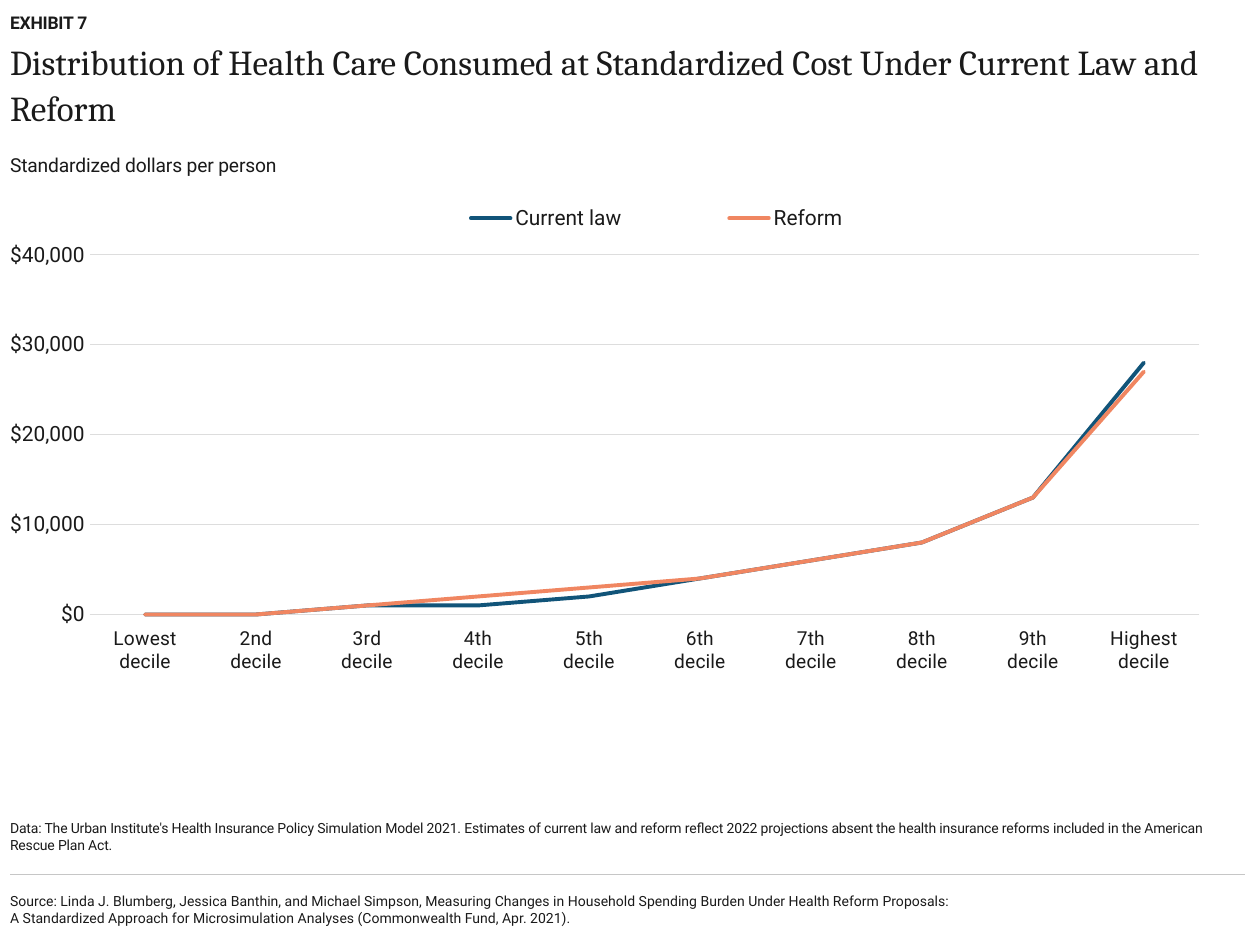
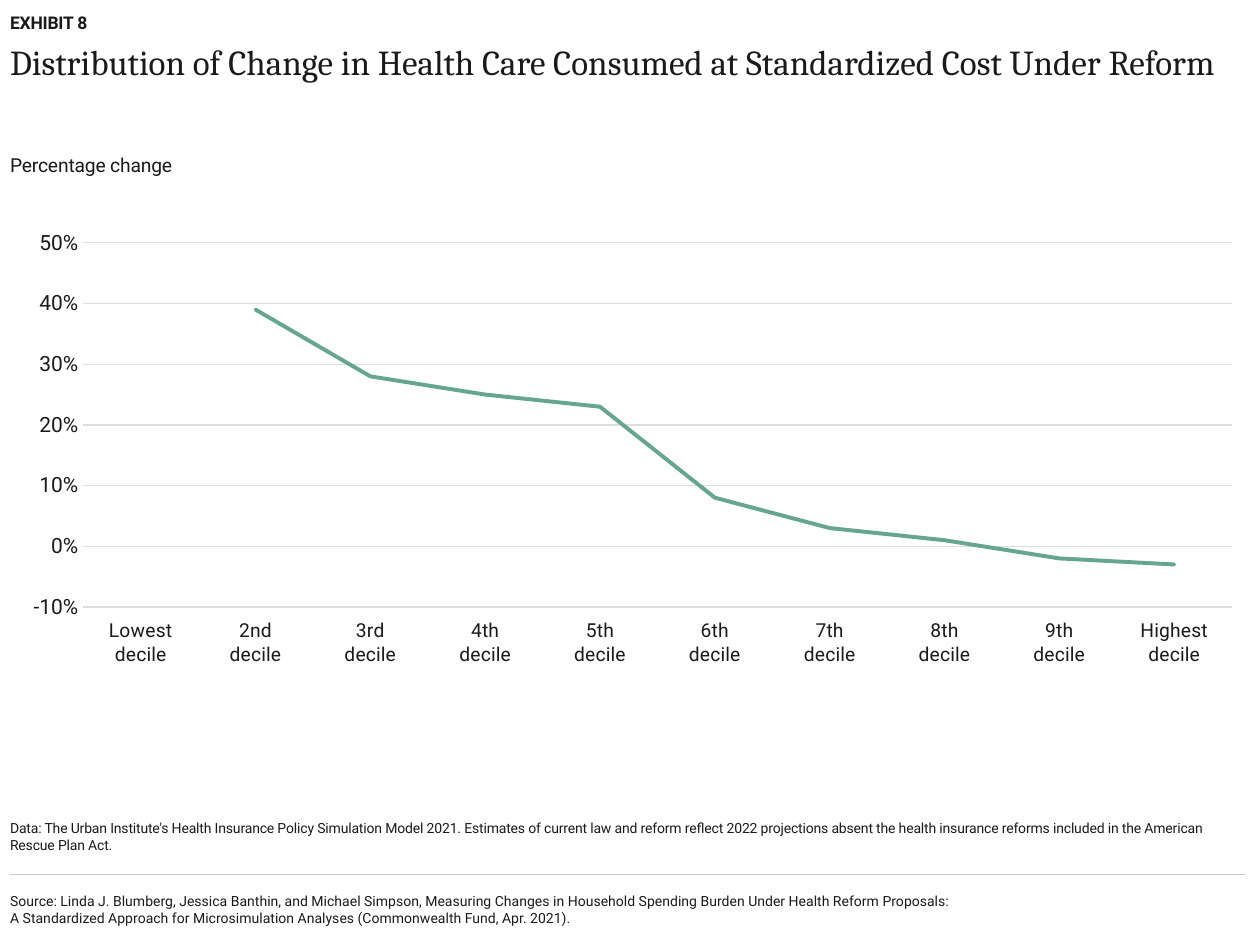
from lxml import etree
from pptx import Presentation
from pptx.chart.data import CategoryChartData
from pptx.dml.color import RGBColor
from pptx.enum.chart import XL_CHART_TYPE as Kind
from pptx.enum.chart import XL_LEGEND_POSITION as LegendPos
from pptx.enum.chart import XL_TICK_LABEL_POSITION as LabelPos
from pptx.enum.chart import XL_TICK_MARK as Tick
from pptx.enum.shapes import MSO_CONNECTOR as Conn
from pptx.enum.text import MSO_ANCHOR as Anchor
from pptx.oxml.ns import qn
from pptx.util import Inches, Pt

COLS, ROWS = 100, 75  # grid units across and down the slide
LEFT, WIDTH = 0.8, 98  # shared text column, in grid units
INK, RULE, GRID = "1A1A1A", "C6C6C6", "DDDDDD"
NAVY, ORANGE, GREEN = "115479", "F08661", "65A591"
SANS, SERIF = "Roboto", "Cambria"

DECILES = [f"{n}\ndecile" for n in
           ["Lowest", "2nd", "3rd", "4th", "5th", "6th", "7th", "8th", "9th", "Highest"]]
DATA_NOTE = ("Data: The Urban Institute's Health Insurance Policy Simulation Model 2021. "
             "Estimates of current law and reform reflect 2022 projections absent the health "
             "insurance reforms included in the American Rescue Plan Act.")
SOURCE = ("Source: Linda J. Blumberg, Jessica Banthin, and Michael Simpson, Measuring Changes "
          "in Household Spending Burden Under Health Reform Proposals:\n"
          "A Standardized Approach for Microsimulation Analyses (Commonwealth Fund, Apr. 2021).")


def rgb(value):
    return RGBColor.from_string(value)


def set_font(font, size, name=SANS, color=INK, bold=False):
    font.size, font.name, font.bold = Pt(size), name, bold
    font.color.rgb = rgb(color)


def set_line(line, color, width):
    line.color.rgb = rgb(color)
    line.width = Pt(width)


def write(tf, text, size, name=SANS, bold=False, anchor=Anchor.TOP, leading=None, tracking=0):
    """Fill a text frame, one paragraph per line of text."""
    tf.word_wrap = True
    tf.vertical_anchor = anchor
    tf.margin_left = tf.margin_right = tf.margin_top = tf.margin_bottom = 0
    for i, row in enumerate(text.split("\n")):
        p = tf.add_paragraph() if i else tf.paragraphs[0]
        p.line_spacing = leading
        r = p.add_run()
        r.text = row
        set_font(r.font, size, name, bold=bold)
        if tracking:
            r.font._element.set("spc", str(round(tracking * 100)))


def set_layout(parent, index, box, inner=False):
    """Fix the place of a chart part as shares of the chart."""
    for old in parent.findall(qn("c:layout")):
        parent.remove(old)
    layout = etree.Element(qn("c:layout"))
    manual = etree.SubElement(layout, qn("c:manualLayout"))
    fields = [("layoutTarget", "inner")] if inner else []
    fields += [("xMode", "edge"), ("yMode", "edge"), *zip("xywh", box)]
    for tag, value in fields:
        etree.SubElement(manual, qn(f"c:{tag}")).set("val", str(value))
    parent.insert(index, layout)


class Exhibit:
    """Holds the deck, its grid and the current slide."""

    def __init__(self):
        self.prs = Presentation()
        self.prs.slide_width, self.prs.slide_height = Inches(10), Inches(7.5)

    def grid(self, x, y, w, h):
        col, row = self.prs.slide_width / COLS, self.prs.slide_height / ROWS
        return [round(v) for v in (x * col, y * row, w * col, h * row)]

    def text(self, y, h, text, size, w=WIDTH, **fmt):
        sp = self.s.shapes.add_textbox(*self.grid(LEFT, y, w, h))
        write(sp.text_frame, text, size, **fmt)

    def rule(self, y):
        x, y, w, _ = self.grid(LEFT, y, WIDTH, 0)
        sp = self.s.shapes.add_connector(Conn.STRAIGHT, x, y, x + w, y)
        set_line(sp.line, RULE, 0.75)
        etree.SubElement(sp._element.spPr, qn("a:effectLst"))

    def page(self, number, title, unit):
        self.s = self.prs.slides.add_slide(self.prs.slide_layouts[6])
        # Heading
        self.text(0.5, 2.1, f"EXHIBIT {number}", 10, bold=True, anchor=Anchor.BOTTOM, tracking=-0.1)
        self.text(2.9, 8.3, title, 20, name=SERIF, leading=1.1)
        self.text(11.7, 2.7, unit, 11, anchor=Anchor.MIDDLE, tracking=-0.1)
        # Notes and source
        self.text(59.5, 8.2, DATA_NOTE, 8, anchor=Anchor.BOTTOM, tracking=-0.1)
        self.rule(69.4)
        self.text(69.9, 4.6, SOURCE, 8, w=79.9, anchor=Anchor.MIDDLE)

    def line_chart(self, w, h, series, scale, fmt, plot, legend=None):
        data = CategoryChartData()
        data.categories = DECILES
        for name, _, values in series:
            data.add_series(name, values)
        box = self.grid(LEFT, 14.9, w, h)
        chart = self.s.shapes.add_chart(Kind.LINE, *box, data).chart
        set_font(chart.font, 10)
        chart.has_title = False
        set_layout(chart._chartSpace.chart.plotArea, 0, plot, inner=True)

        # Series lines
        for ser, (_, color, _) in zip(chart.plots[0].series, series):
            ser.smooth = False
            set_line(ser.format.line, color, 2.25)
            ser.format.line._ln.set("cap", "rnd")

        # Axes
        cat, val = chart.category_axis, chart.value_axis
        for axis, size in ((cat, 11), (val, 12)):
            axis.major_tick_mark = axis.minor_tick_mark = Tick.NONE
            set_font(axis.tick_labels.font, size)
        cat.tick_label_position = LabelPos.LOW
        set_line(cat.format.line, GRID, 0.75)
        val.minimum_scale, val.maximum_scale, val.major_unit = scale
        val.tick_labels.number_format = fmt
        val.tick_labels.number_format_is_linked = False
        val.format.line.fill.background()
        set_line(val.major_gridlines.format.line, GRID, 0.75)

        # Legend
        chart.has_legend = legend is not None
        if legend:
            chart.legend.position = LegendPos.CORNER
            chart.legend.include_in_layout = False
            set_font(chart.legend.font, 12)
            set_layout(chart.legend._element, 1, legend)


def main():
    ex = Exhibit()

    # Spending by decile
    ex.page(7, "Distribution of Health Care Consumed at Standardized Cost Under "
               "Current Law and Reform", "Standardized dollars per person")
    ex.line_chart(97.3, 48.4, [
        ("Current law", NAVY, [0, 0, 1000, 1000, 2000, 4000, 6000, 8000, 13000, 28000]),
        ("Reform", ORANGE, [0, 0, 1000, 2000, 3000, 4000, 6000, 8000, 13000, 27000]),
    ], (0, 40000, 10000), '"$"#,##0', (0.06, 0.11, 0.91, 0.59), legend=(0.29, 0.02, 0.47, 0.06))

    # Percentage change by decile
    ex.page(8, "Distribution of Change in Health Care Consumed at Standardized Cost "
               "Under Reform", "Percentage change")
    ex.line_chart(97, 43.8, [
        ("Series 1", GREEN, [None, 0.39, 0.28, 0.25, 0.23, 0.08, 0.03, 0.01, -0.02, -0.03]),
    ], (-0.1, 0.5, 0.1), "0%", (0.06, 0.1, 0.94, 0.66))

    ex.prs.save("out.pptx")


if __name__ == "__main__":
    main()
